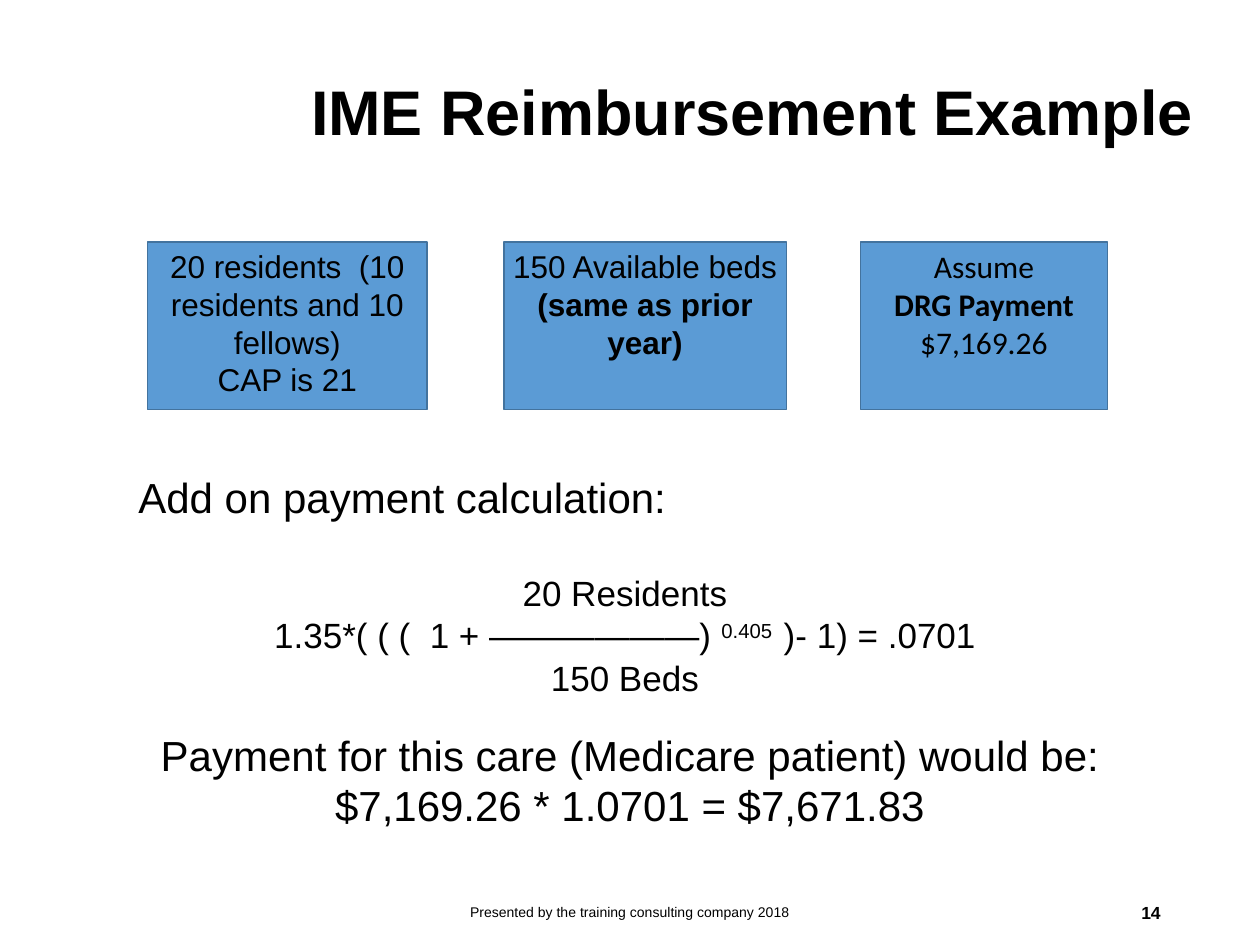
from dataclasses import dataclass
from pptx import Presentation
from pptx.dml.color import RGBColor
from pptx.enum.shapes import MSO_SHAPE
from pptx.enum.text import MSO_ANCHOR, PP_ALIGN
from pptx.util import Inches, Pt


@dataclass(frozen=True)
class Theme:
    ink: RGBColor = RGBColor(0, 0, 0)
    fill: RGBColor = RGBColor(0x5B, 0x9B, 0xD5)
    edge: RGBColor = RGBColor(0x43, 0x73, 0x9E)
    face: str = "Arial"
    alt: str = "Calibri"
    title: int = 36
    body: int = 24
    math: int = 20
    card: int = 18
    page: int = 10
    foot: int = 8


THEME = Theme()


def add_run(para, text, size, face=THEME.face, bold=False, lift=0):
    run = para.add_run()
    run.text = text
    font = run.font
    font.name, font.size, font.bold = face, Pt(size), bold
    font.color.rgb = THEME.ink
    if lift:
        run._r.get_or_add_rPr().set("baseline", str(lift * 1000))


def write(frame, lines, size, align=PP_ALIGN.CENTER, face=THEME.face):
    frame.word_wrap = True
    for row, runs in enumerate(lines):
        para = frame.add_paragraph() if row else frame.paragraphs[0]
        para.alignment = align
        for text, style in runs:
            add_run(para, text, size, face, **style)


def add_text(slide, area, lines, size, align=PP_ALIGN.CENTER, anchor=MSO_ANCHOR.TOP):
    box = slide.shapes.add_textbox(*map(Inches, area))
    box.text_frame.vertical_anchor = anchor
    write(box.text_frame, lines, size, align)


def add_card(slide, left, width, lines, face=THEME.face):
    card = slide.shapes.add_shape(
        MSO_SHAPE.RECTANGLE, Inches(left), Inches(1.92), Inches(width), Inches(1.33)
    )
    card.shadow.inherit = False
    card.fill.solid()
    card.fill.fore_color.rgb = THEME.fill
    card.line.color.rgb = THEME.edge
    card.line.width = Pt(0.75)
    frame = card.text_frame
    frame.vertical_anchor = MSO_ANCHOR.TOP
    frame.margin_left = frame.margin_right = Inches(0.04)
    frame.margin_top = frame.margin_bottom = Inches(0.04)
    write(frame, lines, THEME.card, face=face)


def main():
    deck = Presentation()
    deck.slide_width, deck.slide_height = Inches(10), Inches(7.5)
    slide = deck.slides.add_slide(deck.slide_layouts[6])
    plain, bold = {}, {"bold": True}

    add_text(slide, (1.97, 0.53, 8, 0.71),
             [[("IME Reimbursement Example", bold)]], THEME.title)

    add_card(slide, 1.17, 2.22, [
        [("20 residents  (10 residents and 10 fellows)", plain)],
        [("CAP is 21", plain)],
    ])
    add_card(slide, 4, 2.24, [
        [("150 Available beds", plain)],
        [("(same as prior year)", bold)],
    ])
    add_card(slide, 6.83, 1.96, [
        [("Assume", plain)],
        [("DRG Payment", bold)],
        [("$7,169.26", plain)],
    ], THEME.alt)

    add_text(slide, (1, 3.69, 8.39, 0.5),
             [[("Add on payment calculation:", plain)]], THEME.body, PP_ALIGN.LEFT)
    add_text(slide, (1.52, 4.49, 6.88, 1.11), [
        [("20 Residents", plain)],
        [("1.35*( ( (  1 + ——————) ", plain), ("0.405  ", {"lift": 30}),
         (")- 1) = .0701", plain)],
        [("150 Beds", plain)],
    ], THEME.math)
    add_text(slide, (0, 5.74, 10, 1.25), [
        [("Payment for this care (Medicare patient) would be:", plain)],
        [("$7,169.26 * 1.0701 = $7,671.83", plain)],
    ], THEME.body)

    add_text(slide, (3.31, 7.04, 3.38, 0.4),
             [[("Presented by the training consulting company 2018", plain)]],
             THEME.foot, anchor=MSO_ANCHOR.MIDDLE)
    add_text(slide, (7.06, 7.04, 2.25, 0.4), [[("14", bold)]],
             THEME.page, PP_ALIGN.RIGHT, MSO_ANCHOR.MIDDLE)
    deck.save("out.pptx")


if __name__ == "__main__":
    main()
